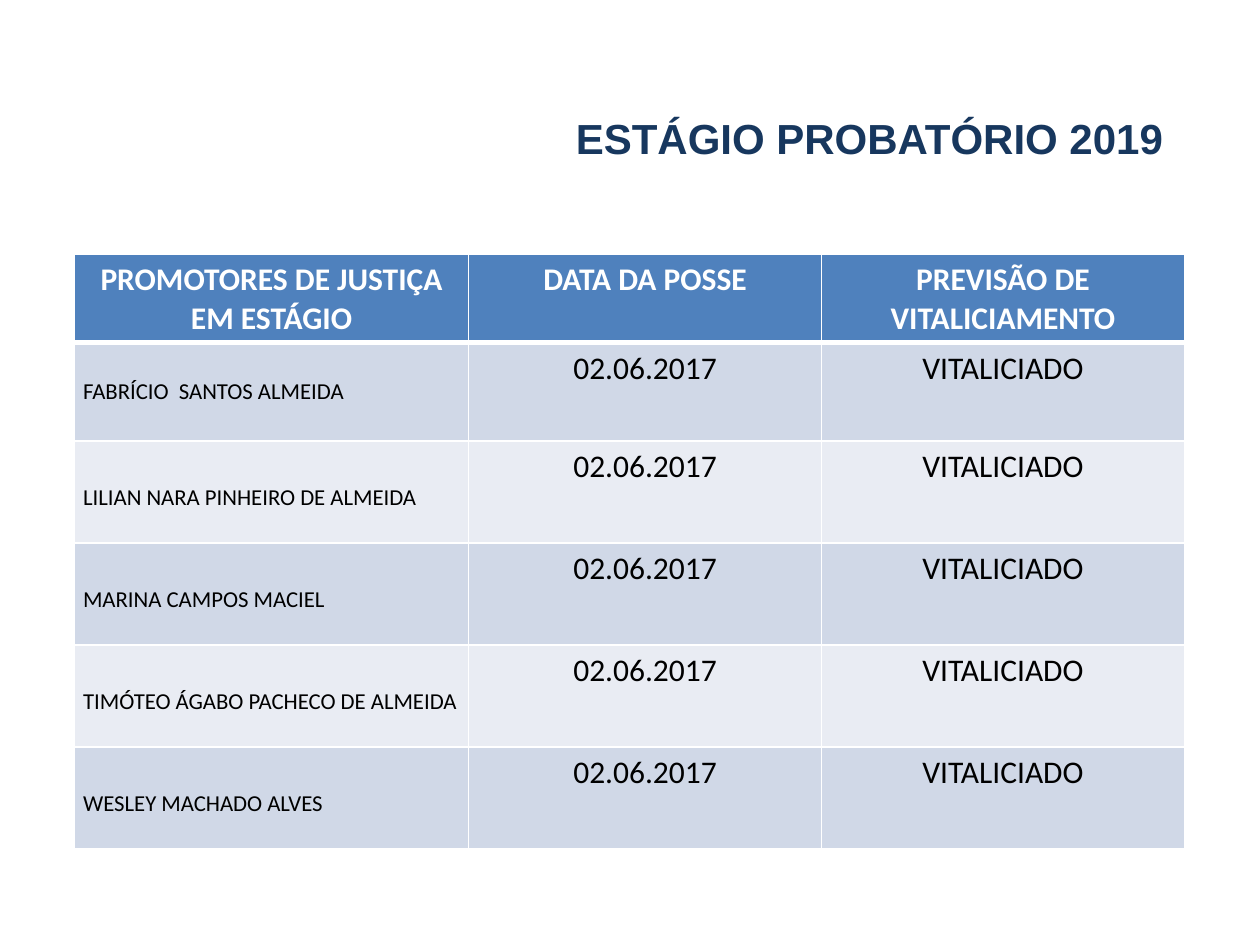
import pptx
import pptx.dml.color
import pptx.enum.text
import pptx.oxml
import pptx.oxml.ns
import pptx.util
from pptx.util import Inches

ALIGN = pptx.enum.text.PP_ALIGN
ANCHOR = pptx.enum.text.MSO_ANCHOR


def color(value):
    return pptx.dml.color.RGBColor.from_string(value)


class ProbationSlide:
    navy = "17375E"
    blue = "4F81BD"
    white = "FFFFFF"
    black = "000000"
    bands = ("D0D8E7", "E9ECF3")
    thin = 0.96
    thick = 3

    def __init__(self, deck):
        self.page = deck.slides.add_slide(deck.slide_layouts[6])

    def add_text(self, frame, text, size, ink, align, bold=False, font="Calibri"):
        para = frame.paragraphs[0]
        para.alignment = align
        span = para.add_run()
        span.text = text
        span.font.name = font
        span.font.size = pptx.util.Pt(size)
        span.font.bold = bold
        span.font.color.rgb = color(ink)
        return para

    def title(self, text, left, top, width, height):
        box = self.page.shapes.add_textbox(
            Inches(left), Inches(top), Inches(width), Inches(height))
        frame = box.text_frame
        frame.word_wrap = True
        frame.vertical_anchor = ANCHOR.MIDDLE
        para = self.add_text(frame, text, 24, self.navy, ALIGN.RIGHT, True, "Arial")
        para.line_spacing = 0.93

    def borders(self, cell, top, bottom):
        widths = {"lnL": self.thin, "lnR": self.thin, "lnT": top, "lnB": bottom}
        properties = cell._tc.get_or_add_tcPr()
        for index, (side, width) in enumerate(widths.items()):
            line = pptx.oxml.parse_xml(
                f'<a:{side} {pptx.oxml.ns.nsdecls("a")} w="{pptx.util.Pt(width)}">'
                f'<a:solidFill><a:srgbClr val="{self.white}"/></a:solidFill></a:{side}>')
            properties.insert(index, line)

    def cell(self, cell, text, row, column):
        header = row == 0
        cell.fill.solid()
        cell.fill.fore_color.rgb = color(
            self.blue if header else self.bands[(row - 1) % 2])
        self.borders(cell, self.thick if row == 1 else self.thin,
                     self.thick if header else self.thin)
        if header:
            self.add_text(cell.text_frame, text, 18, self.white, ALIGN.CENTER, True)
        elif column == 0:
            cell.vertical_anchor = ANCHOR.MIDDLE
            cell.margin_left = cell.margin_right = Inches(0.07)
            cell.margin_top = Inches(0.05 if row == 1 else 0.13)
            para = self.add_text(cell.text_frame, text, 13, self.black, ALIGN.LEFT)
            para.line_spacing = 1.02
        else:
            self.add_text(cell.text_frame, text, 18, self.black, ALIGN.CENTER)

    def table(self, rows, left, top, widths, heights):
        table = self.page.shapes.add_table(
            len(rows), len(widths), Inches(left), Inches(top),
            Inches(sum(widths)), Inches(sum(heights))).table
        for column, width in zip(table.columns, widths):
            column.width = Inches(width)
        for line, height in zip(table.rows, heights):
            line.height = Inches(height)
        for row, texts in enumerate(rows):
            for column, text in enumerate(texts):
                self.cell(table.cell(row, column), text, row, column)


def main():
    deck = pptx.Presentation()
    deck.slide_width = Inches(10)
    deck.slide_height = Inches(7.5)
    slide = ProbationSlide(deck)
    slide.title("ESTÁGIO PROBATÓRIO 2019", 0.59, 0.68, 8.74, 0.87)
    header = ("PROMOTORES DE JUSTIÇA EM ESTÁGIO", "DATA DA POSSE",
              "PREVISÃO DE VITALICIAMENTO")
    prosecutors = (
        "FABRÍCIO  SANTOS ALMEIDA",
        "LILIAN NARA PINHEIRO DE ALMEIDA",
        "MARINA CAMPOS MACIEL",
        "TIMÓTEO ÁGABO PACHECO DE ALMEIDA",
        "WESLEY MACHADO ALVES",
    )
    rows = [header] + [(name, "02.06.2017", "VITALICIADO") for name in prosecutors]
    slide.table(rows, 0.59, 2.02, (3.13, 2.8, 2.88), [0.7, 0.78] + [0.81] * 4)
    deck.save("out.pptx")


if __name__ == "__main__":
    main()
